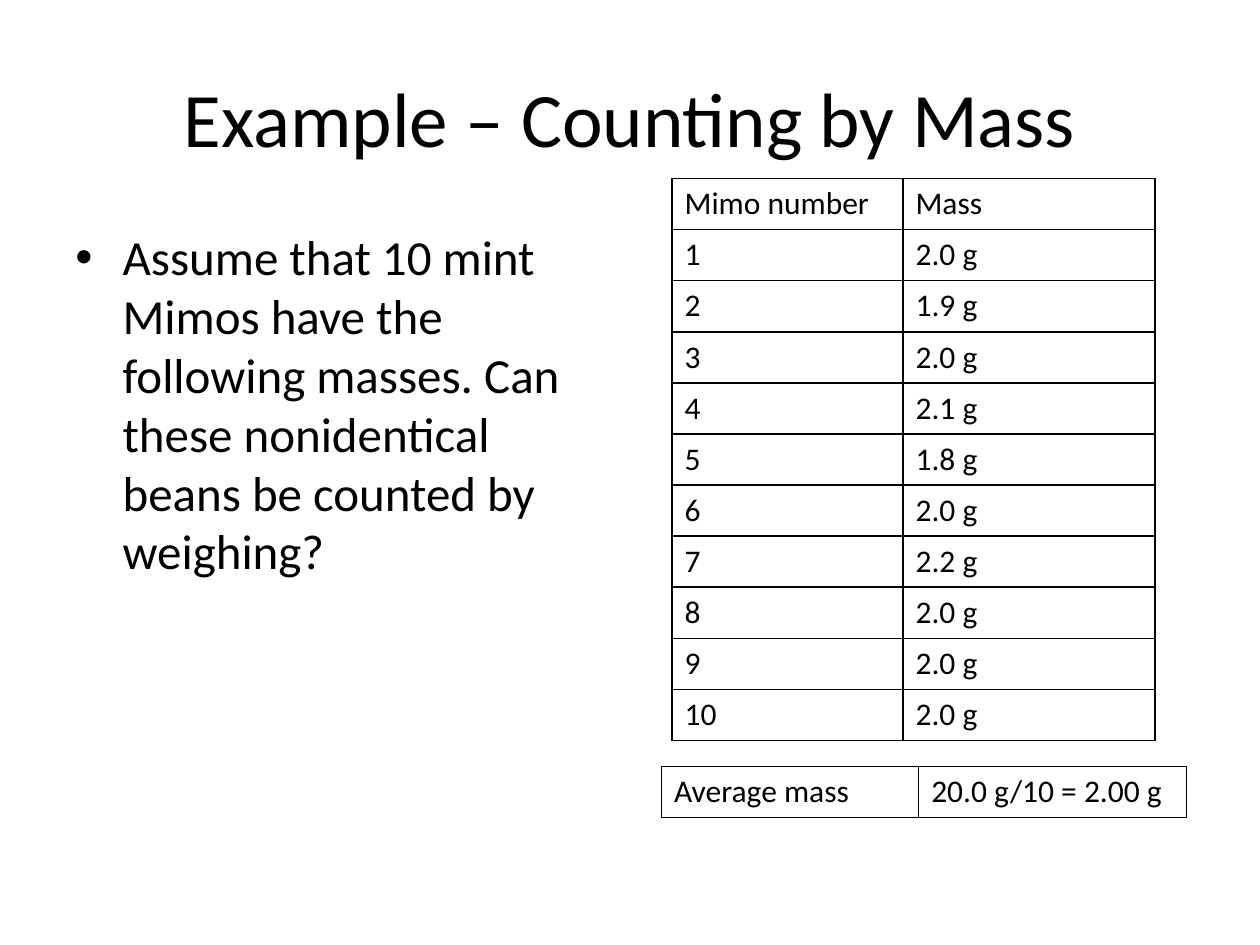
from lxml import etree
from pptx import Presentation
from pptx import util as u
from pptx.dml.color import RGBColor
from pptx.enum import text
from pptx.oxml.ns import qn

Pt = u.Pt
BLACK = RGBColor(0, 0, 0)
FONT = "Calibri"

# Content
TITLE = "Example – Counting by Mass"
BODY = ("Assume that 10 mint Mimos have the following masses. "
        "Can these nonidentical beans be counted by weighing?")
GRAMS = ["2.0", "1.9", "2.0", "2.1", "1.8", "2.0", "2.2", "2.0", "2.0", "2.0"]
MASSES = [("Mimo number", "Mass")]
MASSES += [(str(num), f"{mass} g") for num, mass in enumerate(GRAMS, 1)]
MEAN = [("Average mass", "20.0 g/10 = 2.00 g")]

# Layout in points
ROW = 29.2
TABLES = [  # rows, left, top, column widths
    (MASSES, 384, 102, (132, 144)),
    (MEAN, 378, 438, (147, 153)),
]


def style(frame, size):
    for para in frame.paragraphs:
        for run in para.runs:
            run.font.name = FONT
            run.font.size = Pt(size)
            run.font.color.rgb = BLACK


def add_text(slide, words, box, size, anchor):
    frame = slide.shapes.add_textbox(*map(Pt, box)).text_frame
    frame.word_wrap = True
    frame.vertical_anchor = anchor
    frame.text = words
    style(frame, size)
    return frame.paragraphs[0]


def add_borders(cell):
    props = cell._tc.get_or_add_tcPr()
    for side in ("lnL", "lnR", "lnT", "lnB"):
        line = etree.SubElement(props, qn(f"a:{side}"), w=str(Pt(1)))
        fill = etree.SubElement(line, qn("a:solidFill"))
        etree.SubElement(fill, qn("a:srgbClr"), val=str(BLACK))


def add_grid(slide, rows, left, top, widths):
    table = slide.shapes.add_table(
        len(rows), len(widths), Pt(left), Pt(top),
        Pt(sum(widths)), Pt(ROW * len(rows))).table
    table.first_row = table.horz_banding = False
    for col, width in zip(table.columns, widths):
        col.width = Pt(width)
    for row, words in zip(table.rows, rows):
        row.height = Pt(ROW)
        for cell, word in zip(row.cells, words):
            cell.text = word
            style(cell.text_frame, 18)
            add_borders(cell)
            cell.fill.background()


def main():
    deck = Presentation()
    deck.slide_width, deck.slide_height = Pt(720), Pt(540)
    slide = deck.slides.add_slide(deck.slide_layouts[6])

    # Title
    title = add_text(slide, TITLE, (36, 21.6, 648, 90), 44,
                     text.MSO_ANCHOR.MIDDLE)
    title.alignment = text.PP_ALIGN.CENTER

    # Bulleted question
    body = add_text(slide, BODY, (36, 126, 318, 356.4), 28,
                    text.MSO_ANCHOR.TOP)
    body.space_before = Pt(5.6)
    props = body._p.get_or_add_pPr()
    props.set("marL", str(Pt(27)))
    props.set("indent", str(-Pt(27)))
    etree.SubElement(props, qn("a:buFont"), typeface="Arial")
    etree.SubElement(props, qn("a:buChar"), char="•")

    # Mass table and average
    for grid in TABLES:
        add_grid(slide, *grid)

    deck.save("out.pptx")


if __name__ == "__main__":
    main()
